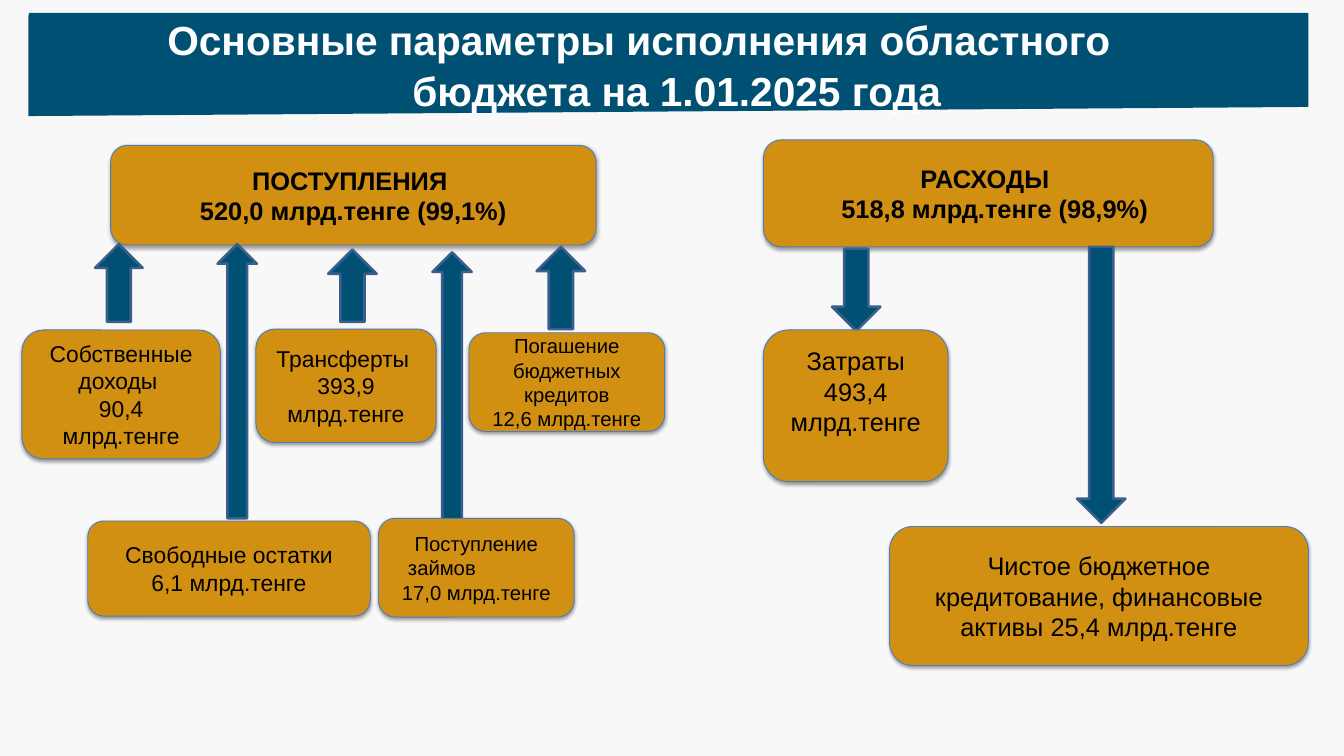
from lxml.etree import SubElement
from pptx import Presentation
from pptx.dml.color import RGBColor
from pptx.enum.shapes import MSO_SHAPE as Shape
from pptx.enum.text import MSO_ANCHOR as Anchor, PP_ALIGN as Align
from pptx.oxml.ns import qn
from pptx.util import Emu, Pt

PX = 9144  # 100 px to the inch
PAGE = RGBColor(0xF8, 0xF8, 0xF8)
TEAL = RGBColor(0x00, 0x50, 0x73)
TEAL_EDGE = RGBColor(0x3A, 0x5F, 0x8C)
GOLD = RGBColor(0xD1, 0x90, 0x12)
GOLD_EDGE = RGBColor(0x4B, 0x7E, 0xBC)
WHITE = RGBColor(0xFF, 0xFF, 0xFF)
BLACK = RGBColor(0x00, 0x00, 0x00)


def px(length):
    return Emu(length * PX)


def add_shadow(parent, blur, distance, angle, alpha):
    """Append a black outer shadow; blur and distance in points."""
    effects = parent.find(qn("a:effectLst"))
    if effects is None:
        effects = SubElement(parent, qn("a:effectLst"))
    shadow = SubElement(effects, qn("a:outerShdw"), blurRad=str(Pt(blur)),
                        dist=str(Pt(distance)), dir=str(angle * 60000),
                        algn="ctr", rotWithShape="0")
    color = SubElement(shadow, qn("a:srgbClr"), val=str(BLACK))
    SubElement(color, qn("a:alpha"), val=str(alpha * 1000))


def add_text(frame, lines, size, color=BLACK, bold=False, align=Align.CENTER,
             indents=None, gap=0, shadow=False):
    """Write one paragraph per line; an indented line keeps its indent in px."""
    for index, line in enumerate(lines):
        para = frame.paragraphs[0] if index == 0 else frame.add_paragraph()
        para.alignment = align
        if index:
            para.space_before = Pt(gap)
        if indents and index in indents:
            para._p.get_or_add_pPr().set("marL", str(px(indents[index])))
        span = para.add_run()
        span.text = line
        font = span.font
        font.size, font.bold = Pt(size), bold
        font.color.rgb = color
        if shadow:
            props = font._element
            props.insert(0, props.makeelement(qn("a:ln"), {"w": "0"}))
            add_shadow(props, 3, 1.5, 45, 40)
        font.name = "Arial"


class BudgetSlide:
    def __init__(self, deck):
        self.page = deck.slides.add_slide(deck.slide_layouts[6])
        fill = self.page.background.fill
        fill.solid()
        fill.fore_color.rgb = PAGE

    def paint(self, shape, fill, edge=None, width=0):
        shape.shadow.inherit = False
        shape.fill.solid()
        shape.fill.fore_color.rgb = fill
        if edge is None:
            shape.line.fill.background()
        else:
            shape.line.color.rgb = edge
            shape.line.width = Pt(width)

    def set_insets(self, frame, left, top, right, bottom):
        frame.word_wrap = True
        frame.margin_left, frame.margin_top = px(left), px(top)
        frame.margin_right, frame.margin_bottom = px(right), px(bottom)

    def shape(self, kind, place):
        return self.page.shapes.add_shape(kind, *map(px, place))

    def banner(self, corners, lines, indents):
        outline = self.page.shapes.build_freeform(*corners[0], scale=PX)
        outline.add_line_segments(corners[1:], close=True)
        banner = outline.convert_to_shape()
        self.paint(banner, TEAL)
        frame = banner.text_frame
        self.set_insets(frame, 0, 2, 0, 0)
        frame.vertical_anchor = Anchor.TOP
        add_text(frame, lines, 32, color=WHITE, bold=True, align=Align.LEFT,
                 indents=indents, gap=2)

    def box(self, place, lines, size, bold=False, indents=None, bottom=7):
        box = self.shape(Shape.ROUNDED_RECTANGLE, place)
        self.paint(box, GOLD, GOLD_EDGE, 0.75)
        add_shadow(box._element.spPr, 3.1, 1.6, 90, 38)
        frame = box.text_frame
        self.set_insets(frame, 13, 7, 13, bottom)
        frame.vertical_anchor = Anchor.MIDDLE
        add_text(frame, lines, size, bold=bold, indents=indents, shadow=True)
        return frame

    def arrow(self, kind, place):
        self.paint(self.shape(kind, place), TEAL, TEAL_EDGE, 2)


def main():
    deck = Presentation()
    deck.slide_width, deck.slide_height = px(1470), px(827)
    slide = BudgetSlide(deck)

    # Title banner with a slanted lower edge
    slide.banner([(1431, 14), (32, 14), (31, 18), (31, 127), (1431, 117)],
                 ["Основные параметры исполнения областного",
                  "бюджета на 1.01.2025 года"], {0: 152, 1: 420})

    # Totals: income on the left, spending on the right
    slide.box((121, 159, 531, 109),
              ["ПОСТУПЛЕНИЯ ", "520,0 млрд.тенге (99,1%)"], 20, bold=True)
    slide.box((835, 153, 492, 117),
              ["РАСХОДЫ ", "518,8 млрд.тенге (98,9%)"], 20, bold=True,
              indents={1: 14})

    # Arrows into income and out of spending
    for place in [(104, 267, 52, 85), (238, 267, 43, 300), (359, 273, 53, 79),
                  (473, 276, 43, 300), (587, 270, 53, 90)]:
        slide.arrow(Shape.UP_ARROW, place)
    for place in [(910, 272, 53, 90), (1178, 270, 53, 302)]:
        slide.arrow(Shape.DOWN_ARROW, place)

    # Sources of income
    slide.box((24, 361, 217, 141),
              ["Собственные доходы ", "90,4 млрд.тенге"], 18)
    slide.box((280, 360, 197, 124), ["Трансферты ", "393,9 млрд.тенге"], 18)
    slide.box((513, 364, 214, 108),
              ["Погашение бюджетных кредитов", "12,6 млрд.тенге"], 16)
    slide.box((96, 570, 309, 104), ["Свободные остатки", "6,1 млрд.тенге"], 18)
    loans = slide.box((414, 567, 214, 108),
                      ["Поступление", "займов", "17,0 млрд.тенге"], 16,
                      indents={1: 14})
    loans.paragraphs[1].alignment = Align.LEFT

    # Kinds of spending
    slide.box((835, 361, 202, 166), ["Затраты 493,4 млрд.тенге"], 20, bottom=39)
    slide.box((973, 576, 458, 152),
              ["Чистое бюджетное кредитование, финансовые "
               "активы 25,4 млрд.тенге"], 20)

    deck.save("out.pptx")


if __name__ == "__main__":
    main()
